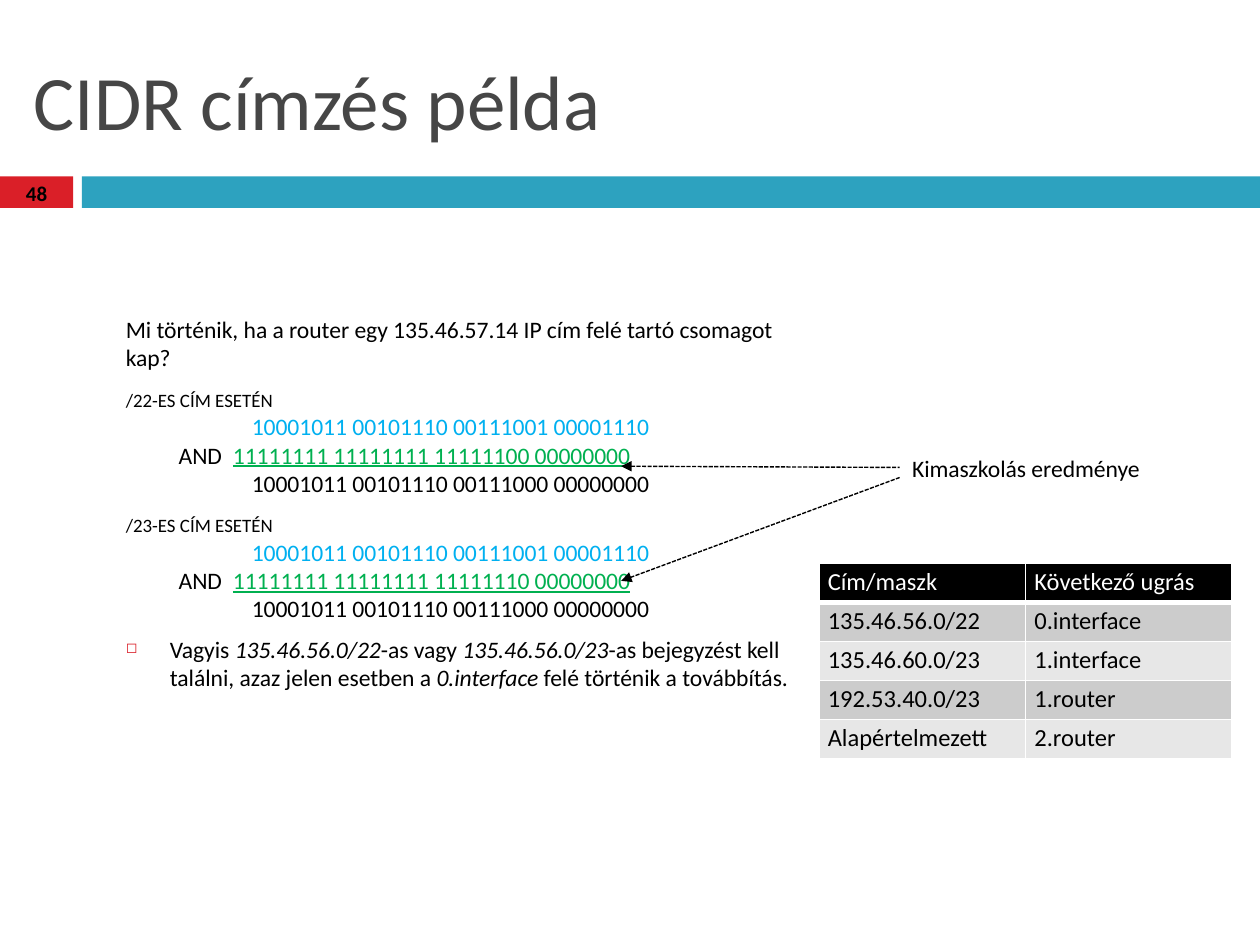
from lxml.etree import SubElement
from pptx import Presentation
from pptx.dml.color import RGBColor
from pptx.enum.dml import MSO_LINE_DASH_STYLE as Dash
from pptx.enum.shapes import MSO_CONNECTOR_TYPE as Connector, MSO_SHAPE as Shape
from pptx.enum.text import MSO_ANCHOR as Anchor, PP_ALIGN as Align
from pptx.oxml.ns import qn
from pptx.util import Inches, Pt

BLACK = RGBColor(0x00, 0x00, 0x00)
WHITE = RGBColor(0xFF, 0xFF, 0xFF)
RED = RGBColor(0xDA, 0x1F, 0x28)
TEAL = RGBColor(0x2D, 0xA2, 0xBF)
TITLE_GRAY = RGBColor(0x46, 0x46, 0x46)
ADDRESS_BLUE = RGBColor(0x00, 0xB0, 0xF0)
MASK_GREEN = RGBColor(0x00, 0xB0, 0x50)
BANDS = [RGBColor(0xCC, 0xCC, 0xCC), RGBColor(0xE7, 0xE7, 0xE7)]

# Content
TITLE = "CIDR címzés példa"
QUESTION = "Mi történik, ha a router egy 135.46.57.14 IP cím felé tartó csomagot kap?"
ADDRESS = "10001011 00101110 00111001 00001110"
RESULT = "10001011 00101110 00111000 00000000"
MASKS = [
    ("/22-es cím esetén", "11111111 11111111 11111100 00000000"),
    ("/23-es cím esetén", "11111111 11111111 11111110 00000000"),
]
CONCLUSION = [  # text, italic
    ("Vagyis ", False), ("135.46.56.0/22", True), ("-as vagy ", False),
    ("135.46.56.0/23", True),
    ("-as bejegyzést kell találni, azaz jelen esetben a ", False),
    ("0.interface", True), (" felé történik a továbbítás.", False),
]
NOTE = "Kimaszkolás eredménye"
ROUTES = [
    ("Cím/maszk", "Következő ugrás"),
    ("135.46.56.0/22", "0.interface"),
    ("135.46.60.0/23", "1.interface"),
    ("192.53.40.0/23", "1.router"),
    ("Alapértelmezett", "2.router"),
]
ARROWS = [((4.93, 3.7), (7.14, 3.71)), ((4.93, 4.61), (7.14, 3.79))]


def add_text(paragraph, text, size=13.5, color=BLACK, bold=False, italic=False,
             underline=False, small_caps=False):
    run = paragraph.add_run()
    run.text = text
    font = run.font
    font.name, font.size, font.color.rgb = "Calibri", Pt(size), color
    font.bold, font.italic, font.underline = bold, italic, underline
    if small_caps:
        font._element.set("cap", "small")


def add_box(slide, left, top, width, height, anchor=Anchor.TOP, wrap=True):
    box = slide.shapes.add_textbox(*map(Inches, (left, top, width, height)))
    box.text_frame.word_wrap = wrap
    box.text_frame.vertical_anchor = anchor
    return box.text_frame


def add_paragraph(frame, before=0, margin=0, indent=0):
    paragraph = frame.add_paragraph()
    paragraph.space_before = Pt(before)
    properties = paragraph._p.get_or_add_pPr()
    properties.set("marL", str(Inches(margin)))
    properties.set("indent", str(Inches(indent)))
    return paragraph


def add_bullet(paragraph, character, color, percent):
    properties = paragraph._p.get_or_add_pPr()
    bullet_color = SubElement(properties, qn("a:buClr"))
    SubElement(bullet_color, qn("a:srgbClr"), val=str(color))
    SubElement(properties, qn("a:buSzPct"), val=str(percent * 1000))
    SubElement(properties, qn("a:buChar"), char=character)


def add_borders(cell, bottom):
    properties = cell._tc.get_or_add_tcPr()
    for side, width in (("L", 1), ("R", 1), ("T", 1), ("B", bottom)):
        line = SubElement(properties, qn(f"a:ln{side}"), w=str(Pt(width)))
        fill = SubElement(line, qn("a:solidFill"))
        SubElement(fill, qn("a:srgbClr"), val=str(WHITE))


def add_bands(slide):
    for left, width, color in ((0, 0.58, RED), (0.65, 9.35, TEAL)):
        band = slide.shapes.add_shape(
            Shape.RECTANGLE, *map(Inches, (left, 1.4, width, 0.25)))
        band.shadow.inherit = False
        band.fill.solid()
        band.fill.fore_color.rgb = color
        band.line.fill.background()


def add_body(slide):
    frame = add_box(slide, 0.9, 2.45, 5.5, 3.7)
    add_text(frame.paragraphs[0], QUESTION)
    for heading, mask in MASKS:
        add_text(add_paragraph(frame, before=7), heading, small_caps=True)
        add_text(add_paragraph(frame, margin=1), ADDRESS, color=ADDRESS_BLUE)
        masking = add_paragraph(frame, margin=0.85, indent=-0.43)
        add_text(masking, "AND\t")
        add_text(masking, mask, color=MASK_GREEN, underline=True)
        add_text(add_paragraph(frame, margin=1), RESULT)
    conclusion = add_paragraph(frame, before=7, margin=0.35, indent=-0.35)
    add_bullet(conclusion, "◻", RED, 60)
    for text, italic in CONCLUSION:
        add_text(conclusion, text, italic=italic)


def add_routes(slide):
    table = slide.shapes.add_table(
        len(ROUTES), 2, *map(Inches, (6.5, 4.47, 3.28, 1.55))).table
    for row, values in enumerate(ROUTES):
        header = row == 0
        for column, value in enumerate(values):
            cell = table.cell(row, column)
            add_borders(cell, bottom=3 if header else 1)
            cell.fill.solid()
            cell.fill.fore_color.rgb = BLACK if header else BANDS[(row - 1) % 2]
            cell.margin_left = cell.margin_right = Inches(0.07)
            cell.margin_top = cell.margin_bottom = Inches(0.03)
            add_text(cell.text_frame.paragraphs[0], value, size=14,
                     color=WHITE if header else BLACK)


def add_arrow(slide, tip, tail):
    arrow = slide.shapes.add_connector(
        Connector.STRAIGHT, *map(Inches, tip + tail))
    arrow.line.color.rgb = BLACK
    arrow.line.width = Pt(0.79)
    arrow.line.dash_style = Dash.SQUARE_DOT
    SubElement(arrow.line._get_or_add_ln(), qn("a:headEnd"), type="triangle")
    SubElement(arrow._element.spPr, qn("a:effectLst"))


def main():
    presentation = Presentation()
    presentation.slide_width, presentation.slide_height = Inches(10), Inches(7.5)
    slide = presentation.slides.add_slide(presentation.slide_layouts[6])

    # Title and bands
    add_bands(slide)
    title = add_box(slide, 0.17, 0.25, 9.67, 1.08, anchor=Anchor.MIDDLE)
    add_text(title.paragraphs[0], TITLE, size=44, color=TITLE_GRAY)

    # Masking example, routing table and note
    add_body(slide)
    add_routes(slide)
    for tip, tail in ARROWS:
        add_arrow(slide, tip, tail)
    note = add_box(slide, 7.14, 3.55, 2.01, 0.33, wrap=False)
    add_text(note.paragraphs[0], NOTE)

    # Slide number
    number = add_box(slide, 0, 1.37, 0.58, 0.33, anchor=Anchor.MIDDLE)
    number.margin_left = number.margin_right = Inches(0.07)
    number.margin_top = number.margin_bottom = Inches(0.04)
    number.paragraphs[0].alignment = Align.CENTER
    add_text(number.paragraphs[0], "48", size=12, bold=True)

    presentation.save("out.pptx")


if __name__ == "__main__":
    main()
